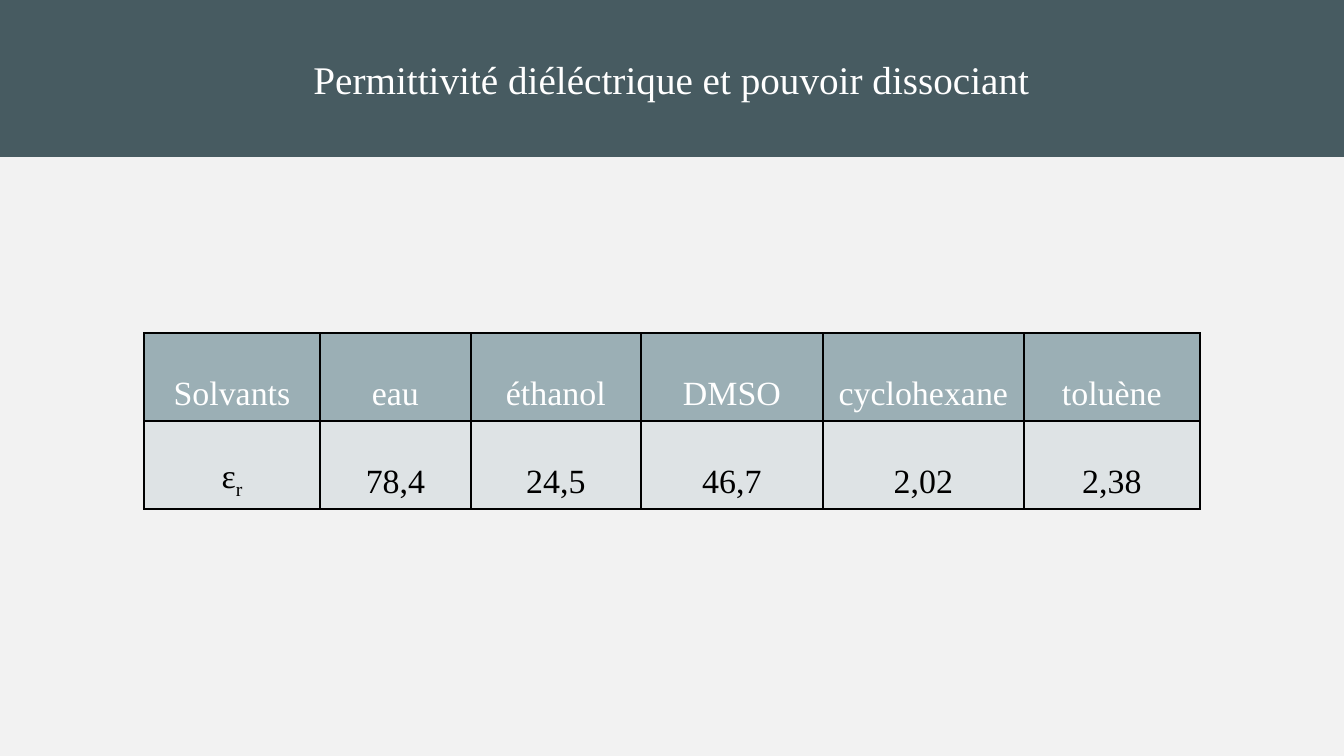
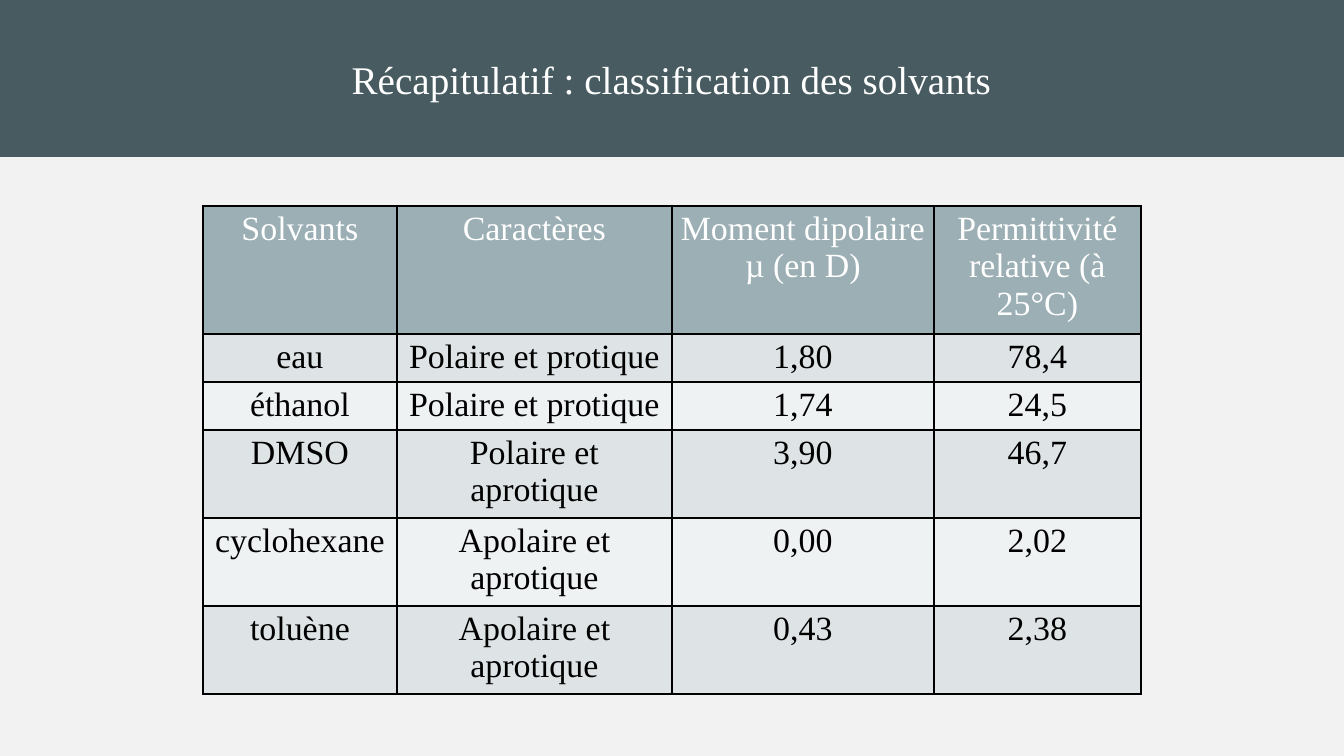
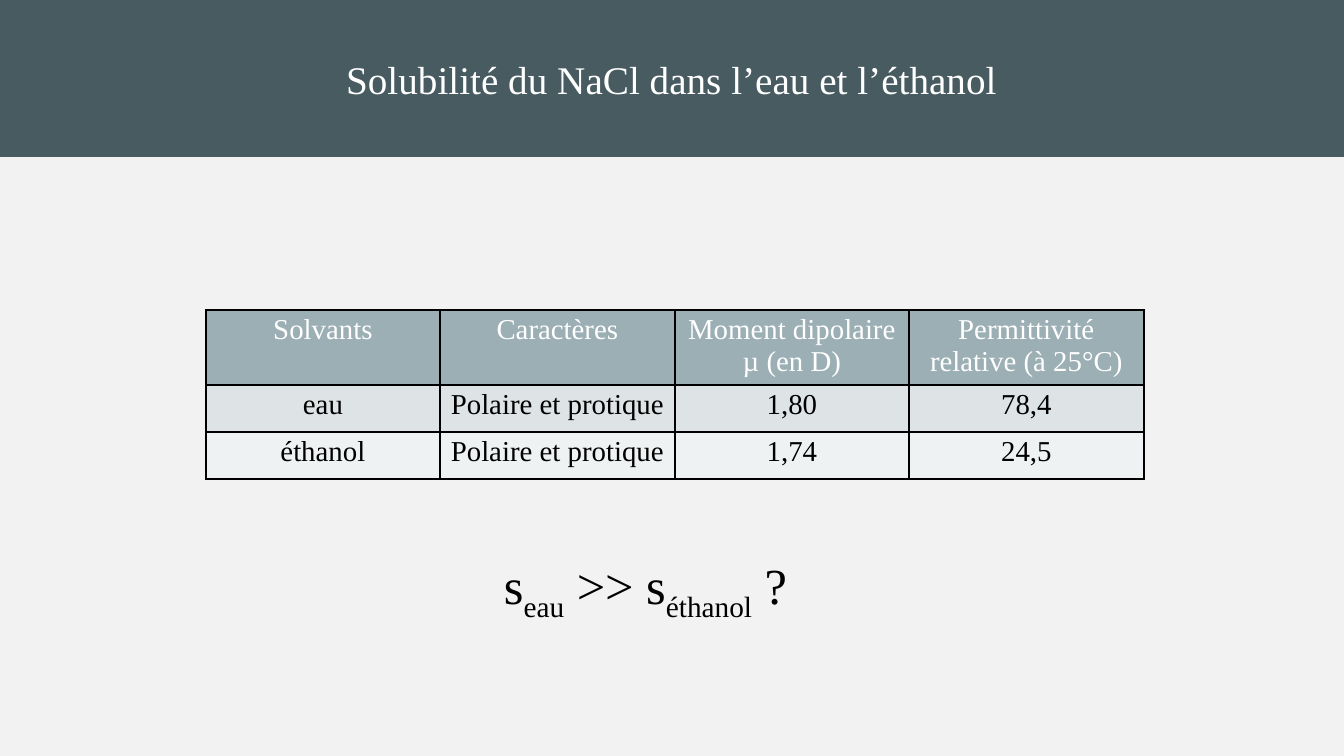
from lxml import etree
from pptx import Presentation
from pptx.dml.color import RGBColor
from pptx.enum.text import MSO_ANCHOR, MSO_AUTO_SIZE, PP_ALIGN
from pptx.oxml.ns import qn
from pptx.util import Pt

CENTER = PP_ALIGN.CENTER
TOP, MIDDLE, BOTTOM = MSO_ANCHOR.TOP, MSO_ANCHOR.MIDDLE, MSO_ANCHOR.BOTTOM
NO_FIT = MSO_AUTO_SIZE.NONE

WIDE, HIGH, BAND = 1344, 756, 157
FONT = "Times New Roman"
COLORS = {
    "page": "F2F2F2",
    "band": "475B61",
    "head": "9BAFB5",
    "odd": "DEE3E5",
    "even": "EFF2F3",
    "light": "FFFFFF",
    "dark": "000000",
}

HEADS = ["Solvants", "Caractères", "Moment dipolaire µ (en D)",
         "Permittivité relative (à 25°C)"]
SOLVENTS = [
    ["eau", "Polaire et protique", "1,80", "78,4"],
    ["éthanol", "Polaire et protique", "1,74", "24,5"],
    ["DMSO", "Polaire et aprotique", "3,90", "46,7"],
    ["cyclohexane", "Apolaire et aprotique", "0,00", "2,02"],
    ["toluène", "Apolaire et aprotique", "0,43", "2,38"],
]


def px(n):
    return round(n * 914400 / 122)


def paint(fill, name):
    fill.solid()
    fill.fore_color.rgb = RGBColor.from_string(COLORS[name])


def write(frame, text, size, color, align=None):
    """Write one paragraph; each second part between ~ marks is a subscript."""
    para = frame.paragraphs[0]
    para.alignment = align
    para.font.name = FONT
    para.font.size = Pt(size)
    para.font.bold = False
    para.font.color.rgb = RGBColor.from_string(COLORS[color])
    for i, part in enumerate(text.split("~")):
        run = para.add_run()
        run.text = part
        if i % 2:
            run.font._element.set("baseline", "-25000")


def edge(cell):
    """Draw a thin dark line on all four sides of a cell."""
    props = cell._tc.get_or_add_tcPr()
    for side in ("a:lnL", "a:lnR", "a:lnT", "a:lnB"):
        line = etree.SubElement(props, qn(side), w=str(Pt(1)))
        fill = etree.SubElement(line, qn("a:solidFill"))
        etree.SubElement(fill, qn("a:srgbClr"), val=COLORS["dark"])


def add_slide(prs, title):
    slide = prs.slides.add_slide(prs.slide_layouts[5])
    band = slide.shapes.title
    band.left, band.top, band.width, band.height = 0, 0, px(WIDE), px(BAND)
    paint(band.fill, "band")
    frame = band.text_frame
    frame.word_wrap = True
    frame.auto_size = NO_FIT
    frame.vertical_anchor = MIDDLE
    write(frame, title, 23.1, "light", CENTER)
    return slide


def add_grid(slide, left, top, cols, rows, data, size, anchor=TOP, foot=4):
    """Place a table with a dark head row and alternating body rows."""
    grid = slide.shapes.add_table(
        len(rows), len(cols), px(left), px(top), px(sum(cols)), px(sum(rows))
    ).table
    for col, width in zip(grid.columns, cols):
        col.width = px(width)
    for r, (row, height) in enumerate(zip(grid.rows, rows)):
        row.height = px(height)
        shade = "head" if r == 0 else "odd" if r % 2 else "even"
        ink = "dark" if r else "light"
        for cell, text in zip(row.cells, data[r]):
            cell.margin_left = cell.margin_right = px(7)
            cell.margin_top, cell.margin_bottom = px(4), px(foot)
            cell.vertical_anchor = anchor
            edge(cell)
            paint(cell.fill, shade)
            write(cell.text_frame, text, size, ink, CENTER)


def add_note(slide, left, top, width, height, text):
    box = slide.shapes.add_textbox(px(left), px(top), px(width), px(height))
    box.text_frame.word_wrap = True
    write(box.text_frame, text, 29.8, "dark")


def main():
    prs = Presentation()
    prs.slide_width, prs.slide_height = px(WIDE), px(HIGH)
    paint(prs.slide_master.background.fill, "page")

    slide = add_slide(prs, "Permittivité diéléctrique et pouvoir dissociant")
    data = [["Solvants"] + [row[0] for row in SOLVENTS],
            ["ε~r"] + [row[-1] for row in SOLVENTS]]
    add_grid(slide, 144, 333, [176, 151, 170, 182, 201, 176], [88] * 2,
             data, 20, BOTTOM, 8)

    slide = add_slide(prs, "Récapitulatif : classification des solvants")
    add_grid(slide, 203, 206, [194, 275, 262, 207],
             [128] + [48] * 2 + [88] * 3, [HEADS] + SOLVENTS, 20)

    slide = add_slide(prs, "Solubilité du NaCl dans l’eau et l’éthanol")
    add_grid(slide, 206, 310, [234, 235] * 2, [75, 47, 47],
             [HEADS] + SOLVENTS[:2], 17)
    add_note(slide, 492, 548, 361, 73, "s~eau~ >> s~éthanol~ ?")

    prs.save("out.pptx")


if __name__ == "__main__":
    main()
